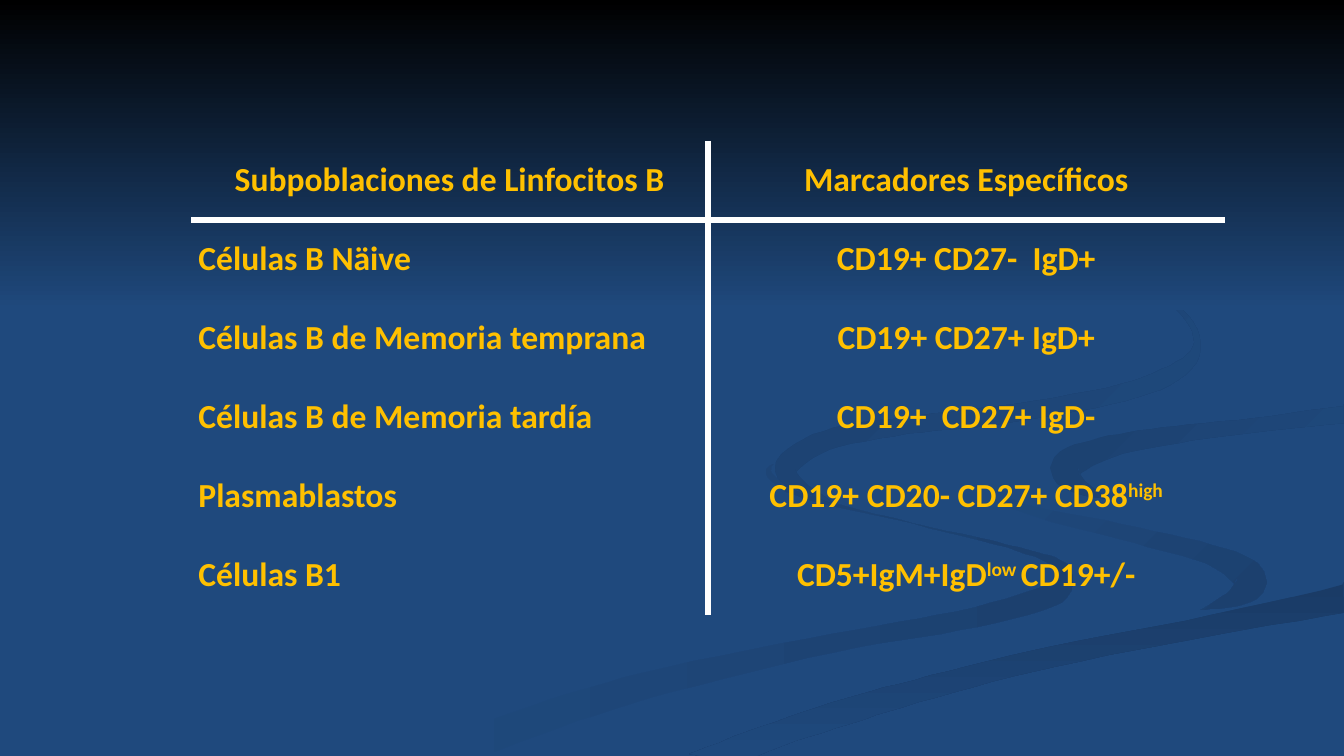
from math import hypot

from lxml.etree import SubElement
from pptx import Presentation
from pptx.dml.color import RGBColor
from pptx.enum.shapes import MSO_AUTO_SHAPE_TYPE as ShapeType
from pptx.enum.text import MSO_VERTICAL_ANCHOR as Anchor, PP_PARAGRAPH_ALIGNMENT as Align
from pptx.oxml.ns import qn
from pptx.util import Cm, Pt

NAVY = RGBColor(0x1F, 0x49, 0x7D)
BLACK = RGBColor(0, 0, 0)
WHITE = RGBColor(255, 255, 255)
GOLD = RGBColor(0xFF, 0xC0, 0)
SHADE = RGBColor(0x1C, 0x40, 0x6E)
DEEP_SHADE = RGBColor(0x1A, 0x3B, 0x66)

PAGE_WIDTH, PAGE_HEIGHT = Cm(33.87), Cm(19.05)
SKY_HEIGHT = Cm(7.82)

# A ribbon is a curve through a few knots: x, y and ribbon width,
# counted in grid units; the page is 750 units high
GRID_UNIT = Cm(0.0254)
GRID_RIGHT, GRID_BOTTOM = PAGE_WIDTH // GRID_UNIT, PAGE_HEIGHT // GRID_UNIT
STEPS_PER_SPAN = 6

MAIN_BAND = [(1345, 393, 15), (1165, 415, 14), (1050, 435, 27), (1004, 462, 60),
             (1082, 503, 25), (1200, 530, 25), (1295, 560, 70), (1220, 606, 10),
             (1039, 638, 8), (928, 662, 14), (764, 711, 16), (640, 758, 20)]
LOWER_RIBBON = [(767, 460, 0), (764, 472, 6), (800, 493, 4), (905, 519, 1), (1000, 542, 3),
                (1045, 557, 8), (1056, 572, 18), (1040, 592, 22), (950, 616, 19),
                (827, 638, 18), (665, 674, 25), (550, 708, 29), (441, 749, 31), (400, 766, 31)]
RIGHT_CURL = [(965, 464, 0), (975, 483, 6), (1018, 505, 9), (1110, 527, 15),
              (1200, 550, 20), (1240, 574, 32), (1225, 593, 18), (1191, 605, 0)]
BOTTOM_BAND = [(1350, 591, 29), (1204, 620, 20), (1047, 651, 20), (926, 681, 22),
               (840, 706, 25), (759, 733, 25), (690, 762, 30)]
SIDE_CURL = [(1345, 410, 18), (1244, 422, 14), (1154, 433, 18), (1095, 445, 22),
             (1058, 463, 30), (1069, 481, 17), (1101, 496, 0)]
UPPER_RIBBON = [(1017, 233, 0), (1105, 267, 2), (1165, 302, 4), (1188, 340, 7),
                (1165, 370, 17), (1100, 393, 17), (990, 412, 18), (900, 422, 17),
                (820, 437, 20), (780, 463, 22), (795, 482, 10), (829, 500, 0)]

# Knots, start colour, end colour, clockwise gradient angle
RIBBONS = [
    (MAIN_BAND, NAVY, NAVY, 0),
    (LOWER_RIBBON, NAVY, SHADE, 0),
    (RIGHT_CURL, NAVY, SHADE, 45),
    (BOTTOM_BAND, DEEP_SHADE, NAVY, 90),
    (SIDE_CURL, SHADE, NAVY, 45),
    (UPPER_RIBBON, SHADE, NAVY, 45),
]

# Each cell is a list of runs; every second run is raised
MARKERS = [
    (["Subpoblaciones de Linfocitos B"], ["Marcadores Específicos"]),
    (["Células B Näive"], ["CD19+ CD27-  IgD+"]),
    (["Células B de Memoria temprana"], ["CD19+ CD27+ IgD+"]),
    (["Células B de Memoria tardía"], ["CD19+  CD27+ IgD-"]),
    (["Plasmablastos"], ["CD19+ CD20- CD27+ CD38", "high"]),
    (["Células B1"], ["CD5+IgM+IgD", "low ", "CD19+/-"]),
]


def smooth(knots):
    """Catmull-Rom curve through all knots."""
    padded = [knots[0], *knots, knots[-1]]
    curve = []
    for four_knots in zip(padded, padded[1:], padded[2:], padded[3:]):
        for step in range(STEPS_PER_SPAN):
            t = step / STEPS_PER_SPAN
            curve.append([
                b + t * (c - a + t * (2 * a - 5 * b + 4 * c - d + t * (3 * b - a - 3 * c + d))) / 2
                for a, b, c, d in zip(*four_knots)])
    return curve + [knots[-1]]


def ribbon_outline(knots):
    """Both edges of a ribbon, half its width from the curve, kept on the page."""
    curve = smooth(knots)
    edges = {1: [], -1: []}
    for index, (x, y, width) in enumerate(curve):
        before, after = curve[max(index - 1, 0)], curve[min(index + 1, len(curve) - 1)]
        dx, dy = after[0] - before[0], after[1] - before[1]
        reach = max(width, 0) / 2 / hypot(dx, dy)
        for side, edge in edges.items():
            edge.append((min(x - side * dy * reach, GRID_RIGHT),
                         min(y + side * dx * reach, GRID_BOTTOM)))
    return edges[1] + edges[-1][::-1]


class SlideBuilder:
    font_name = "Calibri"
    font_size = Pt(24)
    rule_width = Pt(4.5)

    def __init__(self, page):
        self.page = page

    def background(self, color):
        fill = self.page.background.fill
        fill.solid()
        fill.fore_color.rgb = color

    def paint(self, shape, start, end, angle):
        shape.shadow.inherit = False
        shape.line.fill.background()
        if start == end:
            shape.fill.solid()
            shape.fill.fore_color.rgb = start
            return
        shape.fill.gradient()
        shape.fill.gradient_angle = (360 - angle) % 360
        for stop, color in zip(shape.fill.gradient_stops, (start, end)):
            stop.color.rgb = color

    def ribbon(self, knots, start, end, angle):
        first, *others = ribbon_outline(knots)
        builder = self.page.shapes.build_freeform(*first, scale=GRID_UNIT)
        builder.add_line_segments(others, close=True)
        self.paint(builder.convert_to_shape(), start, end, angle)

    def sky(self, height, top_color, bottom_color):
        shape = self.page.shapes.add_shape(ShapeType.RECTANGLE, 0, 0, PAGE_WIDTH, height)
        self.paint(shape, top_color, bottom_color, 90)

    def borders(self, cell, ruled_sides):
        properties = cell._tc.get_or_add_tcPr()
        for side in "LRTB":
            line = SubElement(properties, qn(f"a:ln{side}"))
            if side in ruled_sides:
                line.set("w", str(self.rule_width))
                fill = SubElement(line, qn("a:solidFill"))
                SubElement(fill, qn("a:srgbClr")).set("val", str(WHITE))
            else:
                SubElement(line, qn("a:noFill"))

    def cell_text(self, cell, texts, align):
        cell.vertical_anchor = Anchor.MIDDLE
        cell.margin_left = cell.margin_right = Cm(0.18)
        cell.margin_top = cell.margin_bottom = 0
        para = cell.text_frame.paragraphs[0]
        para.alignment = align
        for index, text in enumerate(texts):
            span = para.add_run()
            span.text = text
            span.font.name = self.font_name
            span.font.size = self.font_size
            span.font.bold = True
            span.font.color.rgb = GOLD
            if index % 2:
                span.font._element.set("baseline", "30000")

    def table(self, rows, left, top, column_width, row_height):
        frame = self.page.shapes.add_table(
            len(rows), 2, left, top, 2 * column_width, len(rows) * row_height)
        table = frame.table
        table.first_row = table.horz_banding = False
        for column in table.columns:
            column.width = column_width
        for r, row in enumerate(rows):
            table.rows[r].height = row_height
            for c, texts in enumerate(row):
                cell = table.cell(r, c)
                # White cross: between the columns and below the header
                self.borders(cell, "RL"[c] + {0: "B", 1: "T"}.get(r, ""))
                cell.fill.background()
                self.cell_text(cell, texts, Align.LEFT if r and c == 0 else Align.CENTER)


def main():
    deck = Presentation()
    deck.slide_width, deck.slide_height = PAGE_WIDTH, PAGE_HEIGHT
    slide = SlideBuilder(deck.slides.add_slide(deck.slide_layouts[6]))

    # Night-blue backdrop
    slide.background(NAVY)
    for ribbon in RIBBONS:
        slide.ribbon(*ribbon)
    slide.sky(SKY_HEIGHT, BLACK, NAVY)

    # Cell populations and their markers
    slide.table(MARKERS, Cm(4.82), Cm(3.55), Cm(13.02), Cm(1.99))

    deck.save("out.pptx")


if __name__ == "__main__":
    main()
